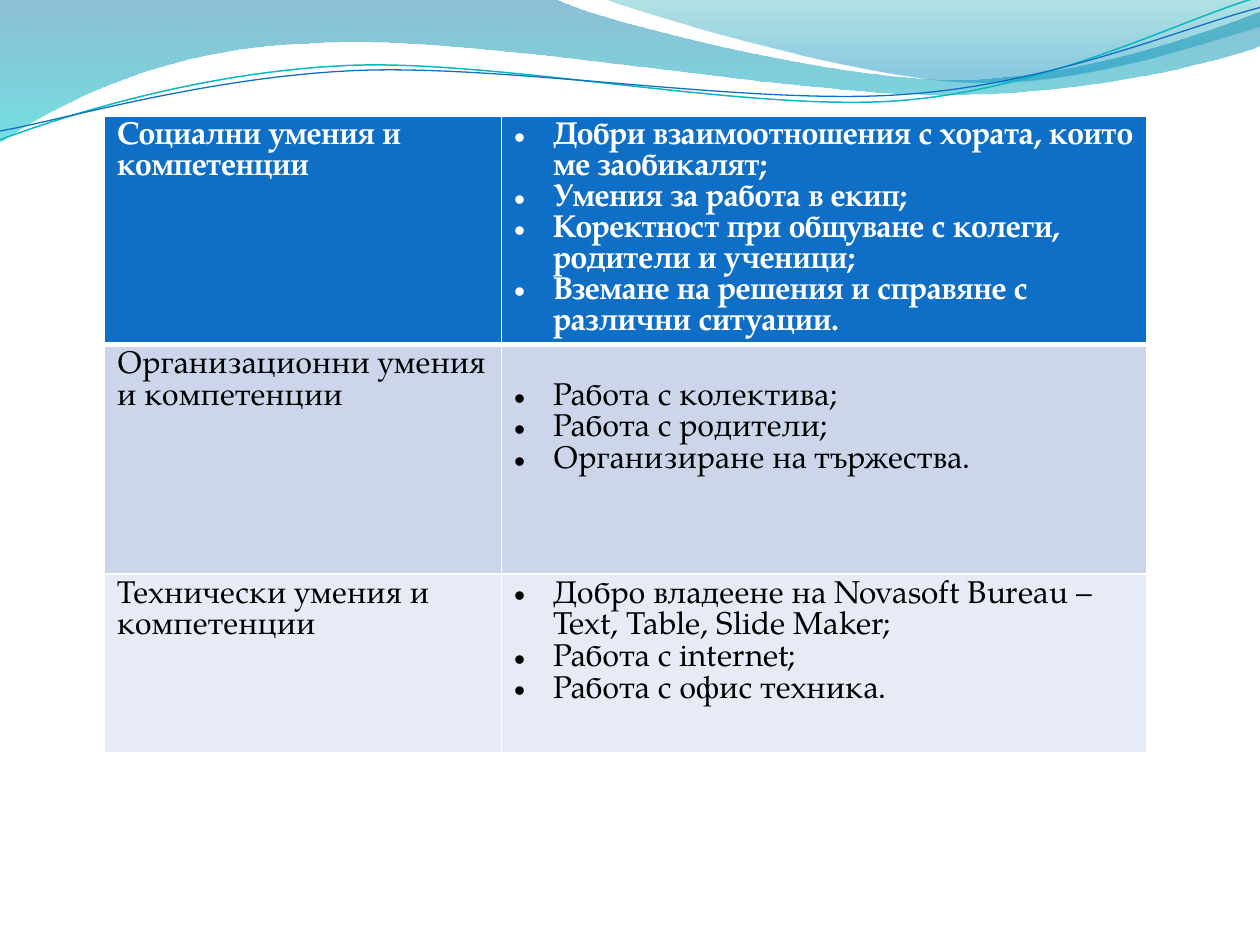
from lxml.etree import SubElement
from pptx import Presentation
from pptx.dml.color import RGBColor as RGB
from pptx.oxml.ns import qn
from pptx.util import Inches, Pt

FONT = "TeX Gyre Pagella"
COLORS = {
    "white": "FFFFFF", "black": "000000", "blue": "0F6FC6",
    "band": "CCD5EA", "pale": "E7EBF5", "teal": "0AB8BF",
    "deep": "0074A1", "aqua": "00C6CF", "sea": "00A1A9", "sky": "008BBF",
}

# Each wave is a start point, then curves (six numbers) and lines (two).
BACK = [(0, 0), (4.4, -0.01),
        (4.76, 0.17, 6.64, 0.63, 7.58, 0.63),
        (8.53, 0.63, 9.58, 0.26, 10, 0.09), (10.01, 0.36),
        (9.83, 0.44, 8.7, 0.76, 7.46, 0.75),
        (6.22, 0.75, 3.82, 0.28, 2.57, 0.34),
        (1.29, 0.36, 0.46, 0.83, -0.01, 1.13), (0, 0)]
FRONT = [(4.79, -0.01), (5.09, 0.11, 6.82, 0.62, 7.69, 0.65),
         (8.56, 0.69, 9.61, 0.32, 10, 0.21), (10, 0), (4.79, -0.01)]
UPPER = [(0, 1.11), (0.48, 0.93, 1.58, 0.57, 2.77, 0.52),
         (3.95, 0.47, 5.93, 0.89, 7.13, 0.8),
         (8.33, 0.71, 9.38, 0.15, 9.98, -0.02)]
LOWER = [(0, 1.04), (0.47, 0.96, 1.64, 0.61, 2.83, 0.56),
         (4.03, 0.51, 5.97, 0.84, 7.17, 0.75),
         (8.36, 0.67, 9.41, 0.21, 10, 0.06)]

ROWS = [
    ("Социални умения и компетенции",
     ["Добри взаимоотношения с хората, които ме заобикалят;",
      "Умения за работа в екип;",
      "Коректност при общуване с колеги, родители и ученици;",
      "Вземане на решения и справяне с различни ситуации."]),
    ("Организационни умения и компетенции",
     ["Работа с колектива;", "Работа с родители;",
      "Организиране на тържества."]),
    ("Технически умения и компетенции",
     ["Добро владеене на Novasoft Bureau – Text, Table, Slide Maker;",
      "Работа с internet;", "Работа с офис техника."]),
]


def rgb(name):
    return RGB.from_string(COLORS[name])


def bend(shape, path):
    """Join the three segments of each curve into one cubic curve."""
    lines = shape._element.spPr.iter(qn("a:lnTo"))
    lines = iter(list(lines))
    for part in path[1:]:
        first = next(lines)
        if len(part) == 2:
            continue
        first.tag = qn("a:cubicBezTo")
        for _ in range(2):
            line = next(lines)
            first.append(line[0])
            line.getparent().remove(line)


def outline(slide, path, left, top, close):
    points = [(Inches(left + part[i]), Inches(top + part[i + 1]))
              for part in path for i in range(0, len(part), 2)]
    build = slide.shapes.build_freeform(*points[0])
    build.add_line_segments(points[1:], close=close)
    shape = build.convert_to_shape()
    bend(shape, path)
    shape.shadow.inherit = False
    return shape


def add_wave(slide, path, left, top, stops):
    shape = outline(slide, path, left, top, True)
    shape.line.fill.background()
    fill = shape.fill
    fill.gradient()
    fill.gradient_angle = 270
    for stop, (place, color, _) in zip(fill.gradient_stops, stops):
        stop.position = place
        stop.color.rgb = rgb(color)
    marks = shape._element.spPr.iter(qn("a:srgbClr"))
    for mark, (_, _, alpha) in zip(marks, stops):
        SubElement(mark, qn("a:alpha"), val=str(alpha * 1000))


def add_curve(slide, path, left, top, color, width):
    shape = outline(slide, path, left, top, False)
    shape.fill.background()
    shape.line.color.rgb = rgb(color)
    shape.line.width = Pt(width)


def add_header(slide, left, top):
    add_wave(slide, BACK, left, top, [(0, "deep", 45), (1, "aqua", 55)])
    add_wave(slide, FRONT, left, top, [(0, "sea", 30), (0.8, "sky", 45)])
    add_curve(slide, UPPER, left, top, "teal", 0.85)
    add_curve(slide, LOWER, left, top, "blue", 0.75)


def set_edges(cell, above, below):
    props = cell._tc.get_or_add_tcPr()
    for side, width in zip("LRTB", (1, 1, above, below)):
        edge = SubElement(props, qn("a:ln" + side), w=str(Pt(width)))
        fill = SubElement(edge, qn("a:solidFill"))
        SubElement(fill, qn("a:srgbClr"), val=COLORS["white"])


def add_bullet(para):
    props = para._p.get_or_add_pPr()
    props.set("marL", str(Inches(0.31)))
    props.set("indent", str(-Inches(0.31)))
    SubElement(props, qn("a:buFont"), typeface="Arial")
    SubElement(props, qn("a:buChar"), char="•")


def fill_cell(cell, lines, row, bullets):
    head = row == 0
    set_edges(cell, 3 if row == 1 else 1, 3 if head else 1)
    cell.fill.solid()
    cell.fill.fore_color.rgb = rgb(("blue", "band", "pale")[row])
    frame = cell.text_frame
    for i, line in enumerate(lines):
        para = frame.add_paragraph() if i else frame.paragraphs[0]
        para.text = line
        if bullets:
            add_bullet(para)
        font = para.font
        font.name, font.size, font.bold = FONT, Pt(18), head
        font.color.rgb = rgb("white" if head else "black")


def add_skills(slide, left, top, width):
    cols, heights = (3.15, width - 3.15), (1.77, 1.82, 1.42)
    table = slide.shapes.add_table(
        len(ROWS), len(cols), Inches(left), Inches(top),
        Inches(width), Inches(sum(heights))).table
    for col, size in zip(table.columns, cols):
        col.width = Inches(size)
    for r, (title, skills) in enumerate(ROWS):
        table.rows[r].height = Inches(heights[r])
        fill_cell(table.cell(r, 0), [title], r, False)
        fill_cell(table.cell(r, 1), skills, r, True)
    table.cell(1, 1).margin_top = Inches(0.3)


def main():
    deck = Presentation()
    deck.slide_width, deck.slide_height = Inches(10), Inches(7.5)
    slide = deck.slides.add_slide(deck.slide_layouts[6])
    add_header(slide, 0, 0)
    add_skills(slide, 0.83, 0.92, 8.27)
    deck.save("out.pptx")


if __name__ == "__main__":
    main()
